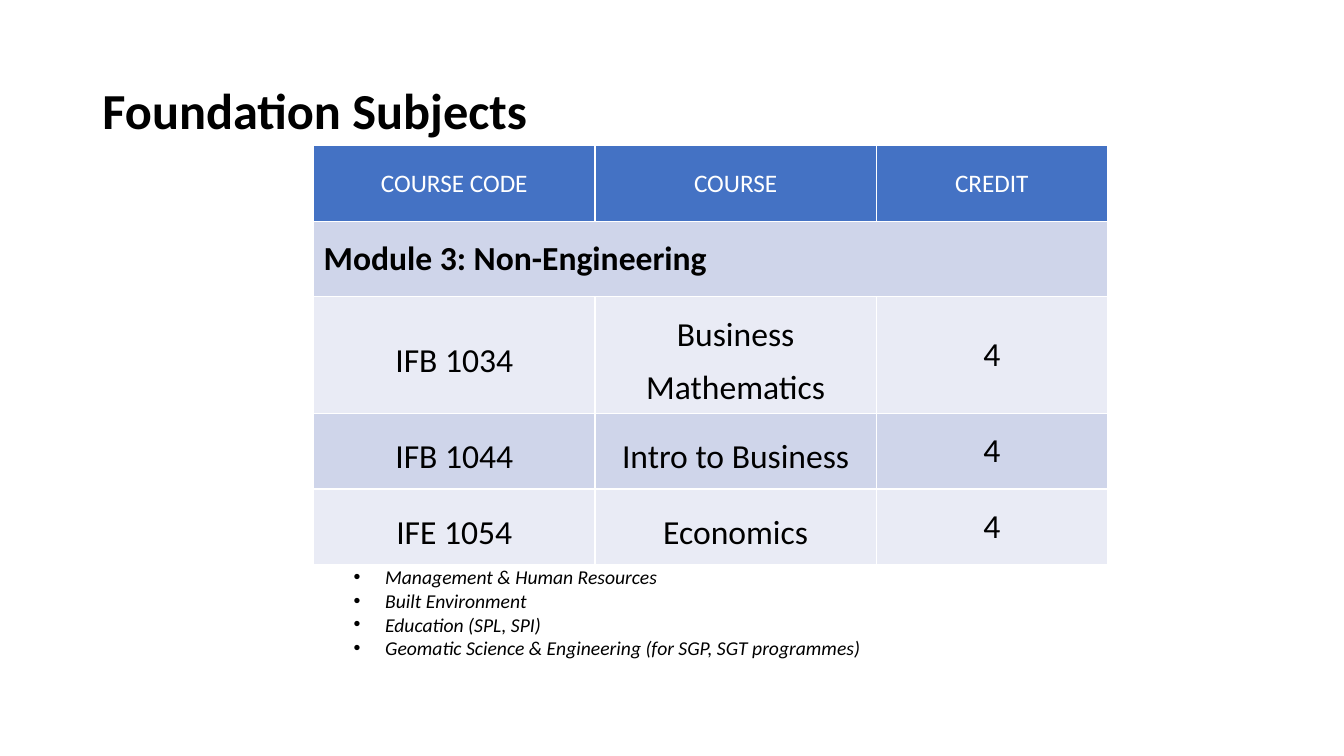
from dataclasses import dataclass

from lxml.etree import SubElement
from pptx import Presentation
from pptx.dml.color import RGBColor
from pptx.enum.text import MSO_ANCHOR, MSO_AUTO_SIZE, PP_ALIGN
from pptx.oxml.ns import qn
from pptx.slide import Slide
from pptx.table import _Cell
from pptx.text.text import _Paragraph
from pptx.util import Pt

FONT = "Calibri"
COLORS = {
    "text": "000000",
    "white": "FFFFFF",
    "header": "4472C4",
    "dark_band": "CFD5EA",
    "light_band": "E9EBF5",
}
COLUMN_WIDTHS = (201, 201, 165)
ROW_HEIGHT = 54
BULLET_INDENT = 22.5


@dataclass(frozen=True)
class Course:
    code: str
    name: str
    credit: str


COURSES = (
    Course("IFB 1034", "Business Mathematics", "4"),
    Course("IFB 1044", "Intro to Business", "4"),
    Course("IFE 1054", "Economics", "4"),
)
PROGRAMMES = (
    "Management & Human Resources",
    "Built Environment",
    "Education (SPL, SPI)",
    "Geomatic Science & Engineering (for SGP, SGT programmes)",
)


def color(name: str) -> RGBColor:
    return RGBColor.from_string(COLORS[name])


def format_paragraph(paragraph: _Paragraph, size: float, color_name: str = "text",
                     bold: bool = False, italic: bool = False) -> None:
    font = paragraph.font
    font.name, font.size = FONT, Pt(size)
    font.bold, font.italic = bold, italic
    font.color.rgb = color(color_name)


def add_cell_borders(cell: _Cell) -> None:
    properties = cell._tc.get_or_add_tcPr()
    for side in ("lnL", "lnR", "lnT", "lnB"):
        line = SubElement(properties, qn(f"a:{side}"), w=str(Pt(1)))
        fill = SubElement(line, qn("a:solidFill"))
        SubElement(fill, qn("a:srgbClr"), val=COLORS["white"])


def fill_cell(cell: _Cell, text: str, band: str, size: float = 24,
              color_name: str = "text", bold: bool = False,
              alignment: PP_ALIGN = PP_ALIGN.CENTER, spacing: float = 1.0) -> None:
    add_cell_borders(cell)
    cell.fill.solid()
    cell.fill.fore_color.rgb = color(band)
    cell.vertical_anchor = MSO_ANCHOR.MIDDLE
    cell.text = text
    paragraph = cell.text_frame.paragraphs[0]
    paragraph.alignment = alignment
    paragraph.line_spacing = spacing
    format_paragraph(paragraph, size, color_name, bold)


def add_title(slide: Slide) -> None:
    title = slide.shapes.title
    title.left, title.top, title.width, title.height = Pt(66), Pt(28.8), Pt(828), Pt(104.4)
    title.text_frame.text = "Foundation Subjects"
    title.text_frame.vertical_anchor = MSO_ANCHOR.MIDDLE
    paragraph = title.text_frame.paragraphs[0]
    paragraph.alignment = PP_ALIGN.LEFT
    paragraph.line_spacing = 0.9
    format_paragraph(paragraph, 36, bold=True)


def add_course_table(slide: Slide) -> None:
    row_count = len(COURSES) + 2
    table = slide.shapes.add_table(
        row_count, len(COLUMN_WIDTHS), Pt(224), Pt(104),
        Pt(sum(COLUMN_WIDTHS)), Pt(ROW_HEIGHT * row_count)).table
    for column, width in zip(table.columns, COLUMN_WIDTHS):
        column.width = Pt(width)

    for index, heading in enumerate(("COURSE CODE", "COURSE", "CREDIT")):
        fill_cell(table.cell(0, index), heading, "header", 18, "white")

    module = table.cell(1, 0)
    module.merge(table.cell(1, len(COLUMN_WIDTHS) - 1))
    fill_cell(module, "Module 3: Non-Engineering", "dark_band", bold=True,
              alignment=PP_ALIGN.LEFT)

    for row, course in enumerate(COURSES, start=2):
        band = "dark_band" if row % 2 else "light_band"
        fill_cell(table.cell(row, 0), course.code, band, spacing=1.3)
        fill_cell(table.cell(row, 1), course.name, band, spacing=1.3)
        fill_cell(table.cell(row, 2), course.credit, band)


def add_bullet(paragraph: _Paragraph) -> None:
    properties = paragraph._p.get_or_add_pPr()
    properties.set("marL", str(Pt(BULLET_INDENT)))
    properties.set("indent", str(-Pt(BULLET_INDENT)))
    bullet_font = SubElement(properties, qn("a:buFont"))
    bullet_font.set("typeface", "Arial")
    SubElement(properties, qn("a:buChar"), char="•")


def add_programme_list(slide: Slide) -> None:
    text_frame = slide.shapes.add_textbox(Pt(245.5), Pt(400.3), Pt(440.6), Pt(75)).text_frame
    text_frame.word_wrap = True
    text_frame.auto_size = MSO_AUTO_SIZE.SHAPE_TO_FIT_TEXT
    text_frame.text = "\n".join(PROGRAMMES)
    for paragraph in text_frame.paragraphs:
        add_bullet(paragraph)
        format_paragraph(paragraph, 14, italic=True)


def main() -> None:
    presentation = Presentation()
    presentation.slide_width, presentation.slide_height = Pt(960), Pt(540)
    title_only = presentation.slide_layouts.get_by_name("Title Only")
    slide = presentation.slides.add_slide(title_only)
    add_title(slide)
    add_course_table(slide)
    add_programme_list(slide)
    presentation.save("out.pptx")


if __name__ == "__main__":
    main()
